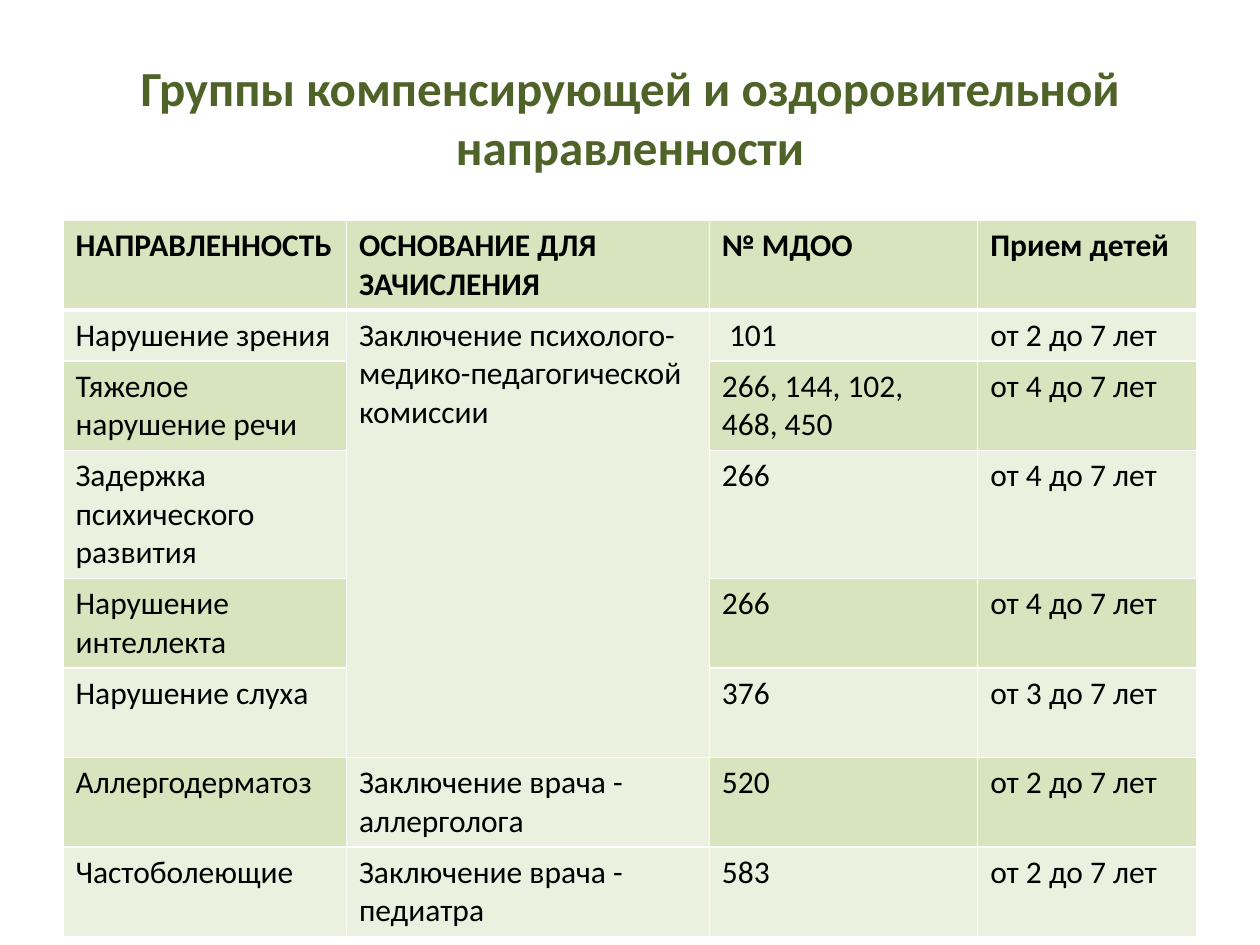
from lxml.etree import SubElement
from pptx import Presentation
from pptx.dml.color import RGBColor
from pptx.enum.text import MSO_ANCHOR, PP_ALIGN
from pptx.oxml.ns import qn
from pptx.util import Inches, Pt

COLORS = {
    "title": "4F6228",
    "text": "000000",
    "band": "D7E4BD",
    "light": "EBF1DE",
    "border": "FFFFFF",
}
TITLE_FORMAT = {"name": "Calibri", "size": Pt(28), "bold": True}
HEADER_FORMAT = {"name": "Calibri", "size": Pt(18), "bold": True}
BODY_FORMAT = {**HEADER_FORMAT, "bold": False}

SLIDE_WIDTH, SLIDE_HEIGHT = Inches(10), Inches(7.5)
MARGIN = 0.05
COLUMN_WIDTHS = [2.25, 2.88, 2.13, 1.74]
ROW_LINES = [2, 1, 2, 3, 2, 2, 2, 2]
LINE_HEIGHT, CELL_PADDING = 0.305, 0.1
BASIS_COLUMN = 1
COMMISSION_ROWS = (1, 5)

TITLE = "Группы компенсирующей и оздоровительной направленности"
ROWS = [
    ["НАПРАВЛЕННОСТЬ", "ОСНОВАНИЕ ДЛЯ ЗАЧИСЛЕНИЯ", "№ МДОО", "Прием детей"],
    ["Нарушение зрения", "Заключение психолого-медико-педагогической комиссии",
     " 101", "от 2 до 7 лет"],
    ["Тяжелое нарушение речи", "", "266, 144, 102, 468, 450", "от 4 до 7 лет"],
    ["Задержка психического развития", "", "266", "от 4 до 7 лет"],
    ["Нарушение интеллекта", "", "266", "от 4 до 7 лет"],
    ["Нарушение слуха", "", "376", "от 3 до 7 лет"],
    ["Аллергодерматоз", "Заключение врача - аллерголога", "520", "от 2 до 7 лет"],
    ["Частоболеющие", "Заключение врача - педиатра", "583", "от 2 до 7 лет"],
]


def write_text(frame, text, formats, color):
    para = frame.paragraphs[0]
    span = para.add_run()
    span.text = text
    for name, value in formats.items():
        setattr(span.font, name, value)
    span.font.color.rgb = RGBColor.from_string(COLORS[color])
    return para


def add_title(page):
    box = page.shapes.title
    box.left, box.top = int(SLIDE_WIDTH * MARGIN), int(SLIDE_HEIGHT * 0.04)
    box.width, box.height = int(SLIDE_WIDTH * (1 - 2 * MARGIN)), Inches(1.25)
    box.text_frame.word_wrap = True
    box.text_frame.vertical_anchor = MSO_ANCHOR.MIDDLE
    write_text(box.text_frame, TITLE, TITLE_FORMAT, "title").alignment = PP_ALIGN.CENTER


def draw_borders(cell, widths):
    properties = cell._tc.get_or_add_tcPr()
    for position, (side, width) in enumerate(widths.items()):
        line = properties.makeelement(qn(f"a:ln{side}"), {"w": str(Pt(width))})
        fill = SubElement(line, qn("a:solidFill"))
        SubElement(fill, qn("a:srgbClr"), val=COLORS["border"])
        properties.insert(position, line)


def format_cell(cell, text, row, column):
    banded = row == 0 or (row % 2 == 0 and column != BASIS_COLUMN)
    cell.fill.solid()
    cell.fill.fore_color.rgb = RGBColor.from_string(COLORS["band" if banded else "light"])
    draw_borders(cell, {"L": 1, "R": 1, "T": 3 if row == 1 else 1, "B": 3 if row == 0 else 1})
    if text:
        write_text(cell.text_frame, text, BODY_FORMAT if row else HEADER_FORMAT, "text")


def add_groups_table(page):
    heights = [Inches(CELL_PADDING + lines * LINE_HEIGHT) for lines in ROW_LINES]
    table = page.shapes.add_table(
        len(ROWS), len(COLUMN_WIDTHS), int(SLIDE_WIDTH * MARGIN), Inches(1.75),
        Inches(sum(COLUMN_WIDTHS)), sum(heights)).table
    for column, width in zip(table.columns, COLUMN_WIDTHS):
        column.width = Inches(width)
    for row, height in zip(table.rows, heights):
        row.height = height
    for row, texts in enumerate(ROWS):
        for column, text in enumerate(texts):
            format_cell(table.cell(row, column), text, row, column)
    first, last = COMMISSION_ROWS
    table.cell(first, BASIS_COLUMN).merge(table.cell(last, BASIS_COLUMN))


def main():
    deck = Presentation()
    deck.slide_width, deck.slide_height = SLIDE_WIDTH, SLIDE_HEIGHT
    page = deck.slides.add_slide(deck.slide_layouts.get_by_name("Title Only"))
    add_title(page)
    add_groups_table(page)
    deck.save("out.pptx")


if __name__ == "__main__":
    main()
